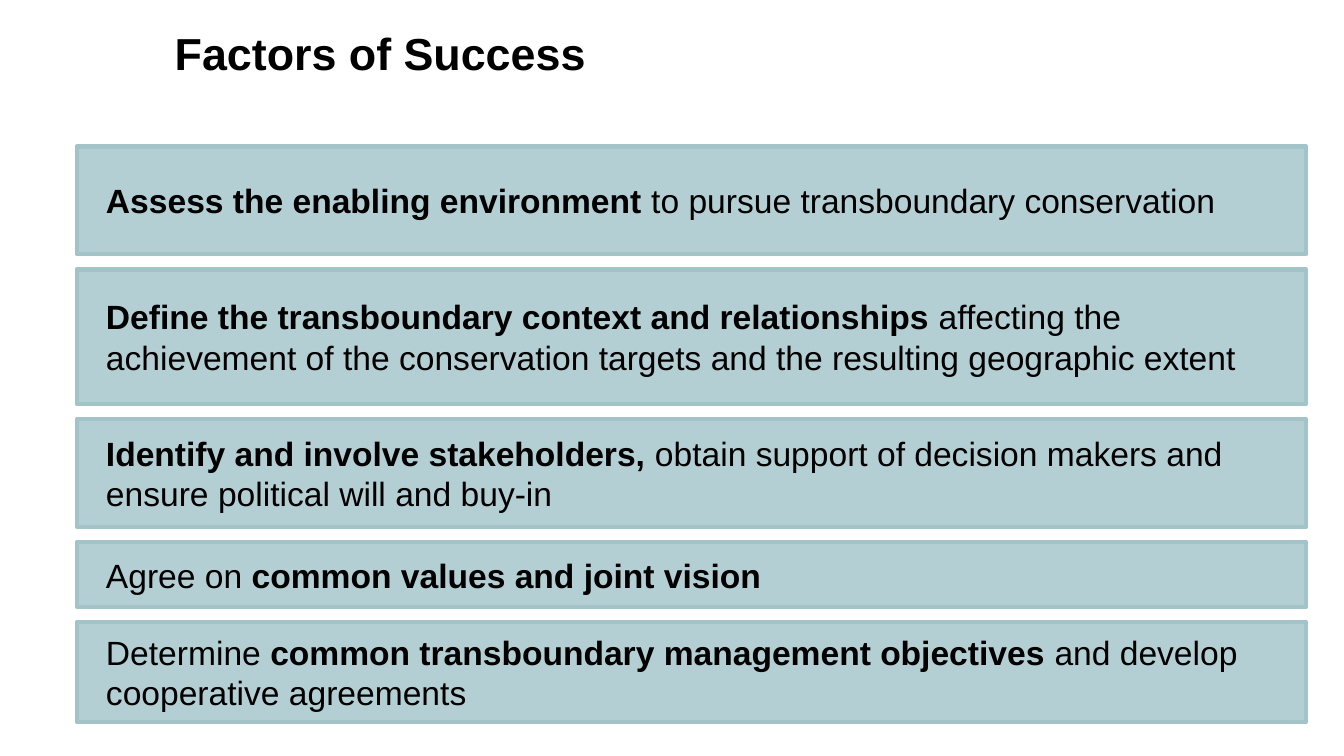
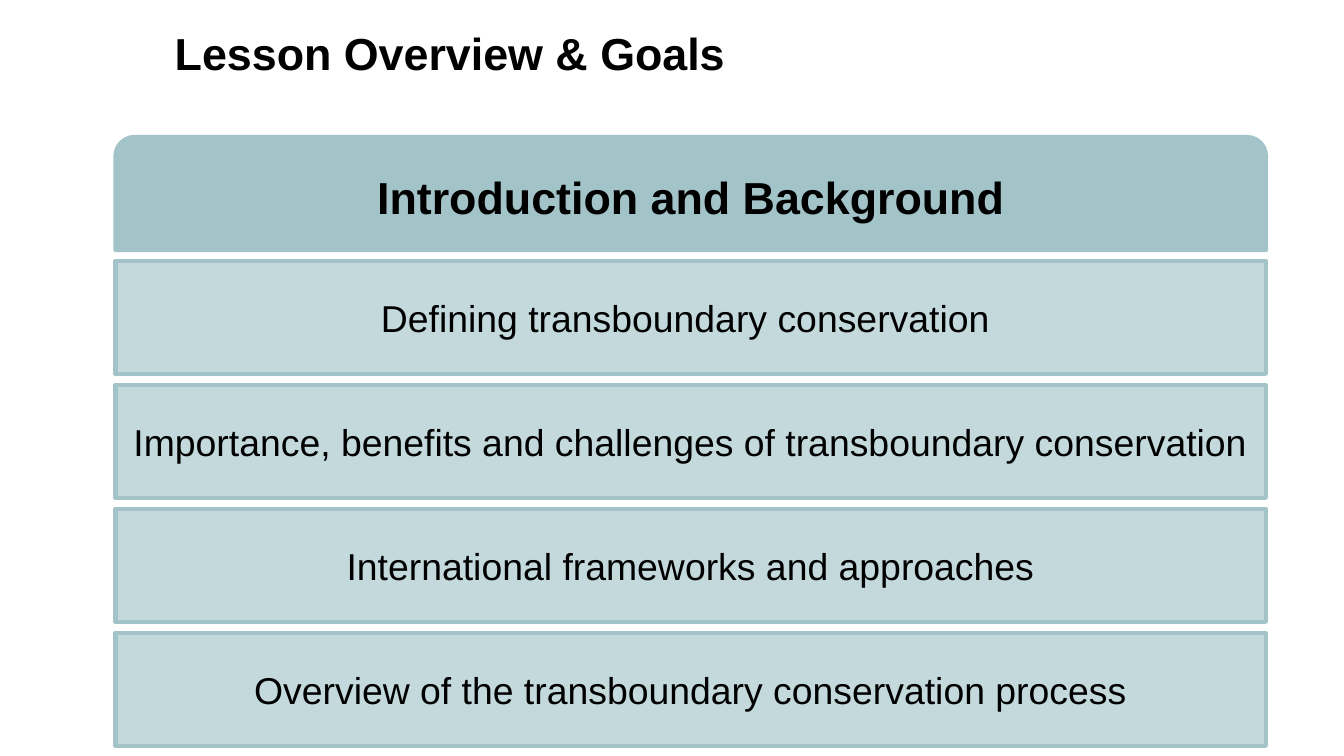
from lxml.etree import SubElement
from pptx import Presentation
from pptx.dml.color import RGBColor
from pptx.enum.shapes import MSO_SHAPE
from pptx.enum.text import MSO_ANCHOR, MSO_AUTO_SIZE, PP_ALIGN
from pptx.oxml.ns import qn
from pptx.util import Inches, Pt

W = 10
H = W * 9 / 16
TEAL, BLACK, WHITE = "A2C4C9", "000000", "FFFFFF"
TITLE_BOX = (1.2, 0.14, 8.8, 0.5)
BOX_H = 0.84

FACTORS = [
    (0.8, [("Assess the enabling environment ", True),
           ("to pursue transboundary conservation", False)]),
    (1, [("Define the transboundary context and relationships ", True),
         ("affecting the achievement of the conservation targets "
          "and the resulting geographic extent", False)]),
    (0.8, [("Identify and involve stakeholders, ", True),
           ("obtain support of decision makers and ensure political will and buy-in", False)]),
    (0.48, [("Agree on ", False), ("common values and joint vision", True)]),
    (0.74, [("Determine", False),
            (" common transboundary management objectives ", True),
            ("and develop cooperative agreements", False)]),
]
HEADING = "Introduction and Background"
LESSONS = [
    "Defining transboundary conservation ",
    "Importance, benefits and challenges of transboundary conservation",
    "International frameworks and approaches",
    "Overview of the transboundary conservation process",
]

FACTOR_STYLE = dict(size=18, alpha=80, align=PP_ALIGN.LEFT, indent=0.12, after=6)
LESSON_STYLE = dict(size=20, alpha=63)
HEADING_STYLE = dict(size=24, shape=MSO_SHAPE.ROUND_2_SAME_RECTANGLE)


def rgb(color):
    return RGBColor.from_string(color)


def fill(sp, color, alpha=100):
    sp.fill.solid()
    sp.fill.fore_color.rgb = rgb(color)
    if alpha < 100:
        clr = sp.fill._xPr.find(qn("a:solidFill"))[0]
        SubElement(clr, qn("a:alpha")).set("val", str(alpha * 1000))


def write(p, runs, size):
    for text, bold in runs:
        r = p.add_run()
        r.text = text
        for key, value in dict(name="Arial", size=Pt(size), bold=bold).items():
            setattr(r.font, key, value)
        r.font.color.rgb = rgb(BLACK)


def add_slide(prs, title):
    s = prs.slides.add_slide(prs.slide_layouts[5])
    sp = s.shapes.title
    for key, value in zip(("left", "top", "width", "height"), TITLE_BOX):
        setattr(sp, key, Inches(value))
    fill(sp, WHITE, 55)
    tf = sp.text_frame
    tf.auto_size = MSO_AUTO_SIZE.SHAPE_TO_FIT_TEXT
    tf.vertical_anchor = MSO_ANCHOR.MIDDLE
    tf.paragraphs[0].alignment = PP_ALIGN.LEFT
    write(tf.paragraphs[0], [(title, True)], 24)
    return s


def add_box(s, at, runs, size, alpha=100, shape=MSO_SHAPE.RECTANGLE,
            align=PP_ALIGN.CENTER, indent=0, after=0):
    sp = s.shapes.add_shape(shape, *map(Inches, at))
    sp.shadow.inherit = False
    fill(sp, TEAL, alpha)
    sp.line.color.rgb = rgb(TEAL)
    sp.line.width = Pt(2.25)
    tf = sp.text_frame
    tf.word_wrap = True
    tf.vertical_anchor = MSO_ANCHOR.MIDDLE
    for side in ("left", "top", "right", "bottom"):
        setattr(tf, f"margin_{side}", Inches(0.1))
    p = tf.paragraphs[0]
    p.alignment = align
    p.space_after = Pt(after)
    p._p.get_or_add_pPr().set("marL", str(Inches(indent)))
    write(p, runs, size)


def add_stack(s, left, width, top, bottom, rows):
    gap = (bottom - top - sum(h for h, _, _ in rows)) / (len(rows) - 1)
    for h, runs, style in rows:
        add_box(s, (left, top, width, h), runs, **style)
        top += h + gap


def main():
    prs = Presentation()
    prs.slide_width, prs.slide_height = Inches(W), Inches(H)

    s = add_slide(prs, "Factors of Success")
    add_stack(s, 0.57, 9.15, 1.09, 5.37,
              [(h, runs, FACTOR_STYLE) for h, runs in FACTORS])

    s = add_slide(prs, "Lesson Overview & Goals")
    add_stack(s, 0.86, 8.56, 1.02, 5.55,
              [(BOX_H, [(HEADING, True)], HEADING_STYLE)]
              + [(BOX_H, [(text, False)], LESSON_STYLE) for text in LESSONS])

    prs.save("out.pptx")


if __name__ == "__main__":
    main()
